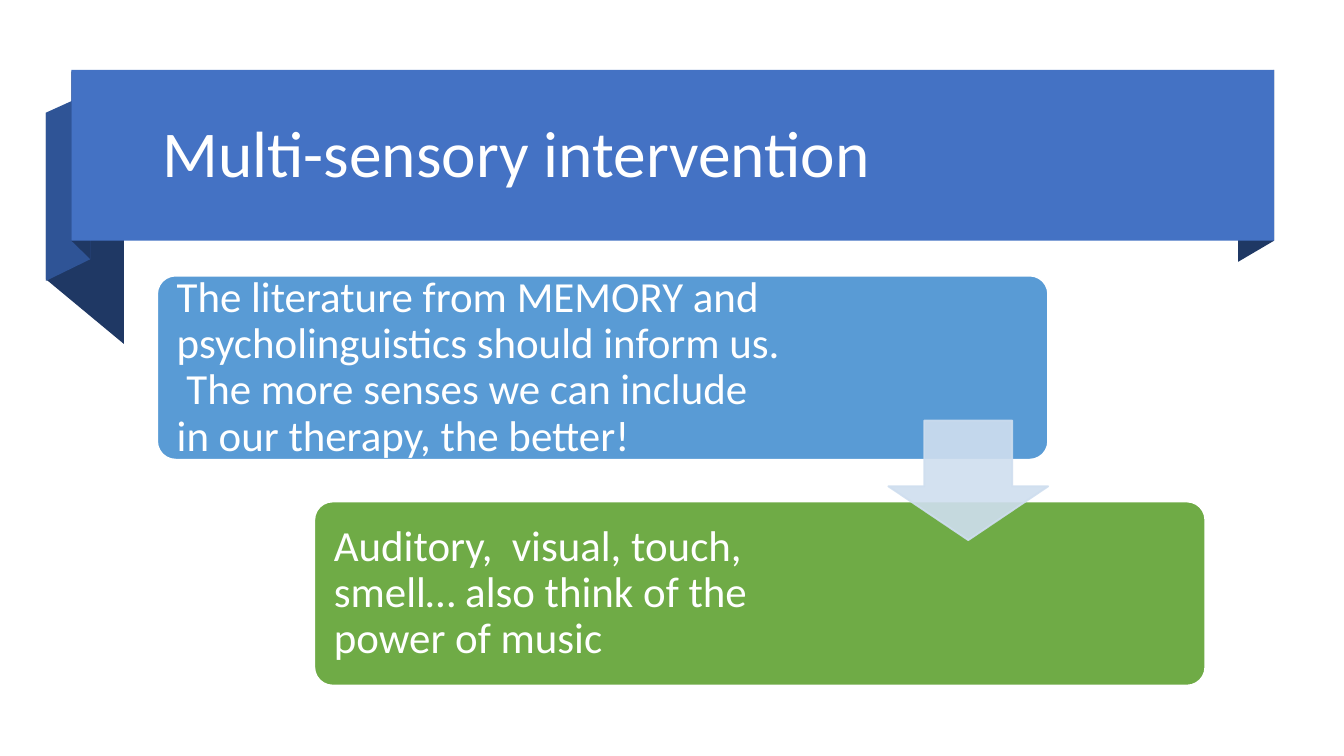
from dataclasses import dataclass

from lxml.etree import SubElement
from pptx import Presentation
from pptx.dml.color import RGBColor
from pptx.enum.shapes import MSO_SHAPE as Preset
from pptx.enum.text import MSO_ANCHOR as Anchor, MSO_AUTO_SIZE as AutoSize, PP_ALIGN as Align
from pptx.oxml.ns import qn
from pptx.util import Cm, Pt


@dataclass(frozen=True)
class Theme:
    font: str = "Calibri"
    title_size: float = 35
    card_size: float = 23
    text: str = "FFFFFF"
    ribbon: str = "4472C4"
    fold: str = "2F5496"
    fold_dark: str = "1F3864"
    cards: tuple = ("599BD5", "6FAB46")
    arrow: str = "CFDEEF"


@dataclass(frozen=True)
class Box:
    """A region in centimetres."""
    left: float
    top: float
    width: float
    height: float

    def inside(self, dx, dy, width, height):
        return Box(self.left + dx, self.top + dy, width, height)

    def lengths(self):
        return [Cm(v) for v in (self.left, self.top, self.width, self.height)]


THEME = Theme()
TITLE = "Multi-sensory intervention"
STEPS = [  # wording, label width
    ("The literature from MEMORY and psycholinguistics should inform us.  "
     "The more senses we can include in our therapy, the better!", 12.04),
    ("Auditory,  visual, touch, smell… also think of the power of music", 10.57),
]


def set_attributes(target, values):
    for name, value in values.items():
        setattr(target, name, value)


def paint(shape, fill, line=None, opacity=None):
    shape.shadow.inherit = False
    shape.fill.solid()
    shape.fill.fore_color.rgb = RGBColor.from_string(fill)
    if line:
        shape.line.color.rgb = RGBColor.from_string(line)
        shape.line.width = Pt(1)
    else:
        shape.line.fill.background()
    if opacity is not None:
        for color in shape._element.spPr.iter(qn("a:srgbClr")):
            SubElement(color, qn("a:alpha"), val=str(opacity * 1000))


def write(shape, wording, size, inset_x, inset_y):
    frame = shape.text_frame
    set_attributes(frame, {
        "text": wording, "word_wrap": True, "auto_size": AutoSize.NONE,
        "vertical_anchor": Anchor.MIDDLE,
        "margin_left": Cm(inset_x), "margin_right": Cm(inset_x),
        "margin_top": Cm(inset_y), "margin_bottom": Cm(inset_y),
    })
    paragraph = frame.paragraphs[0]
    set_attributes(paragraph, {"alignment": Align.LEFT, "line_spacing": 0.9,
                               "space_before": Pt(0)})
    font = paragraph.runs[0].font
    set_attributes(font, {"name": THEME.font, "size": Pt(size)})
    font.color.rgb = RGBColor.from_string(THEME.text)


def add_ribbon_title(slide, box):
    # Folds, as corners measured from the ribbon's top left
    folds = [
        (THEME.fold_dark, [(22.73, 3.23), (22.05, 3.63), (22.05, 0.41), (22.73, 0)]),
        (THEME.fold_dark, [(0.99, 5.18), (-0.48, 3.96), (-0.48, 0.81), (0.99, 2.01)]),
        (THEME.fold, [(0.36, 3.58), (-0.48, 3.99), (-0.48, 0.81), (0.36, 0.43)]),
        (THEME.fold_dark, [(0.36, 3.58), (0, 3.23), (0, 0.03), (0.36, 0.36)]),
    ]
    ribbon = slide.shapes.add_group_shape().shapes
    for color, corners in folds:
        points = [(Cm(box.left + x), Cm(box.top + y)) for x, y in corners]
        outline = ribbon.build_freeform(*points[0])
        outline.add_line_segments(points[1:], close=True)
        paint(outline.convert_to_shape(), color)

    # Front band
    paint(ribbon.add_shape(Preset.RECTANGLE, *box.lengths()), THEME.ribbon)

    # Title, brought in front of the band
    title = slide.shapes.title
    place = box.inside(1.47, 0.25, 20.83, 2.77)
    set_attributes(title, dict(zip(("left", "top", "width", "height"), place.lengths())))
    write(title, TITLE, THEME.title_size, 0.25, 0.13)
    slide.shapes._spTree.append(title._element)


def add_step_cards(slide, box):
    card_width, card_height = 16.84, 3.48
    step_x, step_y = box.width - card_width, box.height - card_height
    diagram = slide.shapes.add_group_shape().shapes

    # Staggered cards with their labels
    for i, ((wording, label_width), color) in enumerate(zip(STEPS, THEME.cards)):
        place = box.inside(i * step_x, i * step_y, card_width, card_height)
        card = diagram.add_shape(Preset.ROUNDED_RECTANGLE, *place.lengths())
        card.adjustments[0] = 0.1
        paint(card, color, THEME.text)
        label = diagram.add_textbox(
            *place.inside(0.12, 0.1, label_width, card_height - 0.2).lengths())
        write(label, wording, THEME.card_size, 0.25, 0.25)

    # Arrow from the first card to the second
    arrow = diagram.add_shape(Preset.DOWN_ARROW,
                              *box.inside(13.82, 2.74, 3.02, 2.26).lengths())
    arrow.adjustments[0], arrow.adjustments[1] = 0.55, 0.45
    paint(arrow, THEME.arrow, THEME.arrow, opacity=90)


def main():
    deck = Presentation()
    deck.slide_width, deck.slide_height = Cm(25.4), Cm(14.29)
    slide = deck.slides.add_slide(deck.slide_layouts[5])  # Title Only
    add_ribbon_title(slide, Box(1.35, 1.32, 22.73, 3.23))
    add_step_cards(slide, Box(2.97, 5.21, 19.81, 7.75))
    deck.save("out.pptx")


if __name__ == "__main__":
    main()
